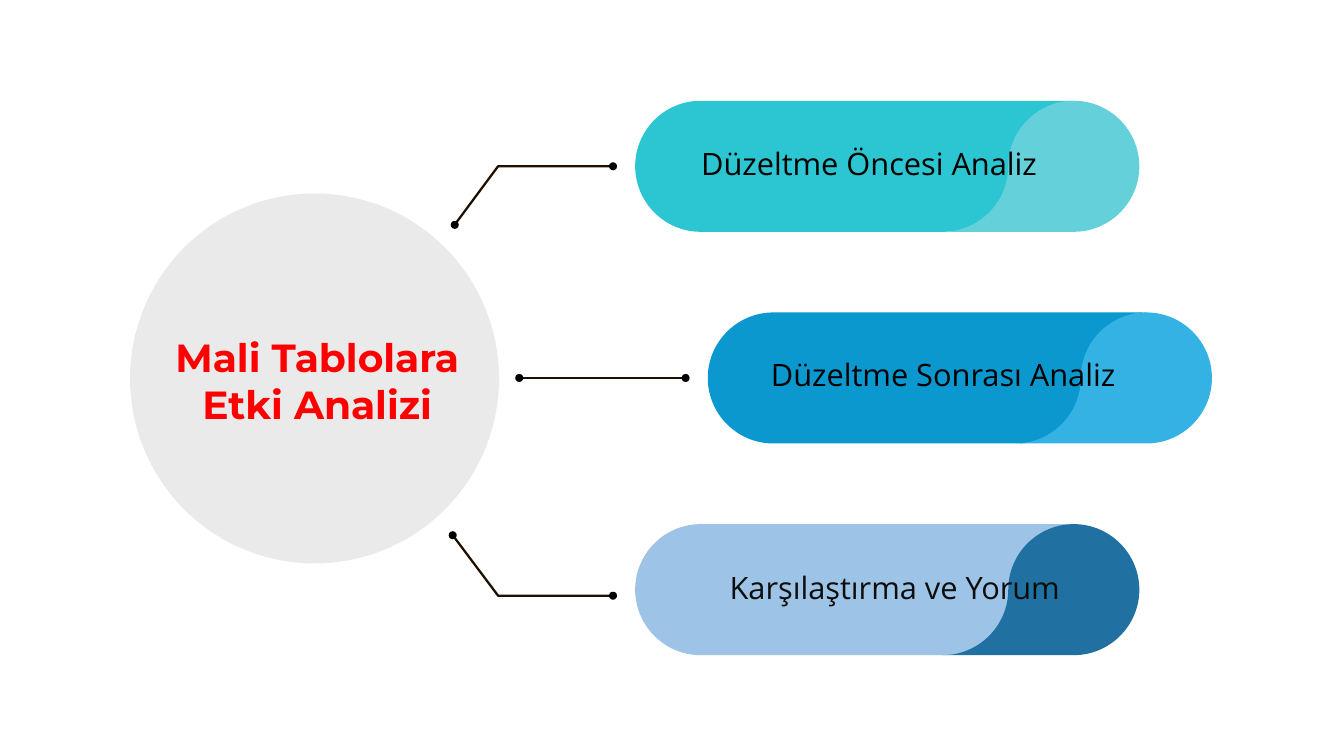
import pptx
import pptx.dml.color
import pptx.enum.shapes
import pptx.enum.text
import pptx.oxml
import pptx.oxml.ns
import pptx.util

Inches = pptx.util.Inches


def color(value):
    return pptx.dml.color.RGBColor.from_string(value)


def write_text(box, text, font="Open Sans", size=22, fill="000000", bold=False, margins=(0.1, 0.05)):
    frame = box.text_frame
    frame.word_wrap = True
    frame.auto_size = pptx.enum.text.MSO_AUTO_SIZE.NONE
    frame.vertical_anchor = pptx.enum.text.MSO_ANCHOR.TOP
    frame.margin_left = frame.margin_right = Inches(margins[0])
    frame.margin_top = frame.margin_bottom = Inches(margins[1])
    para = frame.paragraphs[0]
    para.alignment = pptx.enum.text.PP_ALIGN.CENTER
    span = para.add_run()
    span.text = text
    span.font.name = font
    span.font.size = pptx.util.Pt(size)
    span.font.bold = bold
    span.font.color.rgb = color(fill)


class Diagram:
    """Draw the elements of a hub diagram on one slide."""

    line_color = "1E0F00"
    line_width = 1.62
    dot_size = 0.08
    radius = 0.65
    roundness = 0.55

    def __init__(self, page):
        self.page = page

    def title(self, text, left, top, width, height):
        box = self.page.shapes.title
        box.left, box.top, box.width, box.height = map(Inches, (left, top, width, height))
        write_text(box, text, font="Montserrat", size=28, fill="FF0000", bold=True, margins=(0, 0))
        self.page.shapes._spTree.append(box._element)

    def label(self, text, left, top, width, height, fill):
        box = self.page.shapes.add_textbox(*map(Inches, (left, top, width, height)))
        write_text(box, text, fill=fill)

    def ellipse(self, left, top, width, height, fill):
        shape = self.page.shapes.add_shape(
            pptx.enum.shapes.MSO_SHAPE.OVAL, *map(Inches, (left, top, width, height)))
        self.paint(shape, fill)

    def paint(self, shape, fill):
        shape.shadow.inherit = False
        shape.fill.solid()
        shape.fill.fore_color.rgb = color(fill)
        shape.line.fill.background()

    def outline(self, points, close):
        corners = [(Inches(x), Inches(y)) for x, y in points]
        builder = self.page.shapes.build_freeform(*corners[0])
        builder.add_line_segments(corners[1:], close=close)
        return builder.convert_to_shape()

    def curved_outline(self, start, steps):
        """Join the steps by straight lines or by quarter arcs that leave along x or y."""
        points = [start] + [point for point, direction in steps]
        shape = self.outline(points, close=True)
        segments = list(shape._element.iter(pptx.oxml.ns.qn("a:lnTo")))
        for segment, begin, (end, direction) in zip(segments, points, steps):
            if direction == "line":
                continue
            corner = (end[0], begin[1]) if direction == "x" else (begin[0], end[1])
            curve = pptx.oxml.parse_xml("<a:cubicBezTo %s/>" % pptx.oxml.ns.nsdecls("a"))
            for anchor in (begin, end):
                spot = [a + self.roundness * (c - a) for a, c in zip(anchor, corner)]
                curve.append(pptx.oxml.parse_xml('<a:pt %s x="%d" y="%d"/>' % (
                    pptx.oxml.ns.nsdecls("a"),
                    Inches(spot[0]) - shape.left, Inches(spot[1]) - shape.top)))
            curve.append(segment[0])
            segment.getparent().replace(segment, curve)
        return shape

    def link(self, points):
        if len(points) == 2:
            begin, end = points
            shape = self.page.shapes.add_connector(
                pptx.enum.shapes.MSO_CONNECTOR.STRAIGHT, *map(Inches, begin + end))
            shape._element.spPr.append(pptx.oxml.parse_xml(
                "<a:effectLst %s/>" % pptx.oxml.ns.nsdecls("a")))
        else:
            shape = self.outline(points, close=False)
            shape.shadow.inherit = False
            shape.fill.background()
        shape.line.color.rgb = color(self.line_color)
        shape.line.width = pptx.util.Pt(self.line_width)
        for x, y in (points[-1], points[0]):
            half = self.dot_size / 2
            self.ellipse(x - half, y - half, self.dot_size, self.dot_size, "000000")

    def pill(self, left, top, body_fill, cap_fill):
        radius = self.radius
        middle, bottom = top + radius, top + 2 * radius
        inner, notch, cap = left + radius, left + 4.37, left + 4.35
        body = self.curved_outline((inner, top), [
            ((notch, top), "line"),
            ((notch - radius, middle), "x"),
            ((notch - 2 * radius, bottom), "y"),
            ((inner, bottom), "line"),
            ((left, middle), "x"),
            ((inner, top), "y"),
        ])
        self.paint(body, body_fill)
        tip = self.curved_outline((cap, top), [
            ((cap + radius, middle), "x"),
            ((cap, bottom), "y"),
            ((cap - 2 * radius, bottom), "line"),
            ((cap - radius, middle), "x"),
            ((cap, top), "y"),
        ])
        self.paint(tip, cap_fill)


LINKS = [
    [(4.51, 2.23), (4.94, 1.65), (6.08, 1.65)],
    [(5.15, 3.75), (6.8, 3.75)],
    [(4.49, 5.31), (4.94, 5.91), (6.08, 5.91)],
]
PILLS = [
    (6.3, "2CC6D2", "64D1DA", "Düzeltme Öncesi Analiz", (6.48, 1.39, 4.28, 0.97), "000000"),
    (7.02, "0A98CF", "34B2E3", "Düzeltme Sonrası Analiz", (7.24, 3.48, 4.23, 0.82), "000000"),
    (6.3, "9DC3E6", "2070A1", "Karşılaştırma ve Yorum", (6.99, 5.59, 3.77, 0.81), "0D0D0D"),
]


def main():
    deck = pptx.Presentation()
    deck.slide_width, deck.slide_height = Inches(13.33), Inches(7.5)
    diagram = Diagram(deck.slides.add_slide(deck.slide_layouts[5]))
    diagram.ellipse(1.29, 1.92, 3.66, 3.67, "EAEAEA")
    diagram.title("Mali Tablolara Etki Analizi", 1.57, 3.31, 3.15, 0.72)
    for points in LINKS:
        diagram.link(points)
    for row, (left, body_fill, cap_fill, text, place, text_fill) in enumerate(PILLS):
        diagram.pill(left, 1 + 2.1 * row, body_fill, cap_fill)
        diagram.label(text, *place, fill=text_fill)
    deck.save("out.pptx")


if __name__ == "__main__":
    main()
